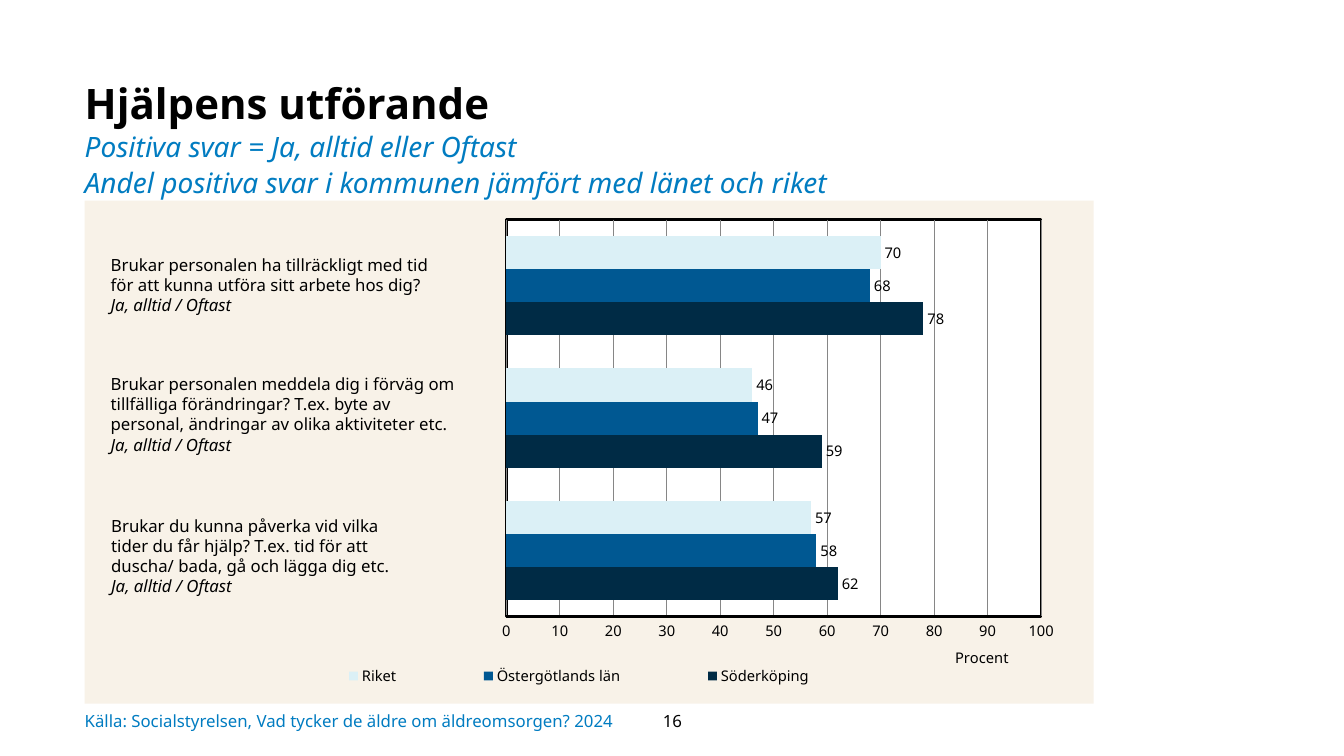
import pptx
import pptx.util
import pptx.chart.data
import pptx.dml.color
import pptx.enum.chart
import pptx.enum.text
import pptx.oxml

Pt = pptx.util.Pt
FONT = "Noto Sans"
BLACK, BLUE = "000000", "017CC1"
ANCHOR = pptx.enum.text.MSO_ANCHOR
ALIGN = pptx.enum.text.PP_ALIGN
ANSWER = "Ja, alltid / Oftast"
LEFT = 60.5
SERIES = [
    ("Söderköping", (62, 59, 78), "002B45"),
    ("Östergötlands län", (58, 47, 68), "005892"),
    ("Riket", (57, 46, 70), "DBF0F6"),
]
QUESTIONS = [
    ((72, 178.5, 340, 63.5), ["Brukar personalen ha tillräckligt med tid",
                              "för att kunna utföra sitt arbete hos dig?"]),
    ((72, 263.5, 268, 65.5), ["Brukar personalen meddela dig i förväg om tillfälliga förändringar? "
                              "T.ex. byte av personal, ändringar av olika aktiviteter etc."]),
    ((72.3, 364.5, 214, 65.5), ["Brukar du kunna påverka vid vilka tider du får hjälp? "
                                "T.ex. tid för att duscha/ bada, gå och lägga dig etc."]),
]


def rgb(value):
    return pptx.dml.color.RGBColor.from_string(value)


def set_font(font, size, color=BLACK, **formats):
    font.color.rgb = rgb(color)
    for name, value in {"name": FONT, "size": Pt(size), **formats}.items():
        setattr(font, name, value)


def set_fill(fmt, color):
    fmt.fill.solid()
    fmt.fill.fore_color.rgb = rgb(color)


def add_text(slide, box, lines, inset=(7.2, 3.6), anchor=ANCHOR.TOP, align=ALIGN.LEFT):
    tf = slide.shapes.add_textbox(*map(Pt, box)).text_frame
    dx, dy = map(Pt, inset)
    frame = {"word_wrap": True, "vertical_anchor": anchor, "margin_left": dx,
             "margin_right": dx, "margin_top": dy, "margin_bottom": dy}
    for name, value in frame.items():
        setattr(tf, name, value)
    for i, (text, size, formats, spacing) in enumerate(lines):
        p = tf.add_paragraph() if i else tf.paragraphs[0]
        p.alignment = align
        if spacing:
            p.line_spacing = Pt(spacing)
        r = p.add_run()
        r.text = text
        set_font(r.font, size, **formats)


def add_heading(slide, box):
    subtitle = {"color": BLUE, "italic": True}
    add_text(slide, box, [
        ("Hjälpens utförande", 30, {"bold": True}, 42),
        ("Positiva svar = Ja, alltid eller Oftast", 20, subtitle, 25.7),
        ("Andel positiva svar i kommunen jämfört med länet och riket", 20, subtitle, 25.7),
    ], inset=(0, 0))


def add_question(slide, box, lines):
    add_text(slide, box, [(line, 12, {}, None) for line in lines]
             + [(ANSWER, 12, {"italic": True}, None)])


def layout_xml(target="", **sizes):
    inner = f'<c:layoutTarget val="{target}"/>' if target else ""
    inner += '<c:xMode val="edge"/><c:yMode val="edge"/>'
    inner += "".join(f'<c:{name} val="{value}"/>' for name, value in sizes.items())
    ns = "http://schemas.openxmlformats.org/drawingml/2006/chart"
    return pptx.oxml.parse_xml(
        f'<c:layout xmlns:c="{ns}"><c:manualLayout>{inner}</c:manualLayout></c:layout>')


def set_layout(element, after, layout):
    for old in element.findall(pptx.oxml.ns.qn("c:layout")):
        element.remove(old)
    if after:
        element.find(pptx.oxml.ns.qn(after)).addnext(layout)
    else:
        element.insert(0, layout)


def shape_properties(fill, line=""):
    ns = "http://schemas.openxmlformats.org/drawingml/2006/"
    border = (f'<a:ln w="{Pt(2)}"><a:solidFill><a:srgbClr val="{line}"/></a:solidFill></a:ln>'
              if line else "<a:ln><a:noFill/></a:ln>")
    return pptx.oxml.parse_xml(
        f'<c:spPr xmlns:c="{ns}chart" xmlns:a="{ns}main"><a:solidFill>'
        f'<a:srgbClr val="{fill}"/></a:solidFill>{border}</c:spPr>')


def add_bar_chart(slide, box):
    data = pptx.chart.data.CategoryChartData()
    data.categories = ["1", "2", "3"]
    for name, values, _ in SERIES:
        data.add_series(name, values)
    kind = pptx.enum.chart.XL_CHART_TYPE.BAR_CLUSTERED
    chart = slide.shapes.add_chart(kind, *map(Pt, box), data).chart
    set_font(chart.font, 10.5)
    chart.has_title = False

    plot = chart.plots[0]
    plot.gap_width, plot.overlap, plot.vary_by_categories = 100, 0, False
    for series, (_, _, color) in zip(plot.series, SERIES):
        set_fill(series.format, color)
        labels = series.data_labels
        labels.show_value = True
        labels.position = pptx.enum.chart.XL_LABEL_POSITION.OUTSIDE_END
        set_font(labels.font, 10.5)

    chart.category_axis.visible = False
    axis = chart.value_axis
    tick = pptx.enum.chart.XL_TICK_MARK.NONE
    settings = {"minimum_scale": 0, "maximum_scale": 100, "major_unit": 10,
                "major_tick_mark": tick, "minor_tick_mark": tick, "has_major_gridlines": True}
    for name, value in settings.items():
        setattr(axis, name, value)
    for line, color, width in ((axis.format.line, BLACK, 2),
                               (axis.major_gridlines.format.line, "868686", 0.75)):
        line.color.rgb, line.width = rgb(color), Pt(width)
    set_font(axis.tick_labels.font, 10.5)
    title = axis.axis_title
    title.text_frame.text = "Procent"
    set_font(title.text_frame.paragraphs[0].runs[0].font, 10.5, bold=False)

    chart.has_legend = True
    legend = chart.legend
    legend.position = pptx.enum.chart.XL_LEGEND_POSITION.BOTTOM
    legend.include_in_layout = False
    set_font(legend.font, 10.5)

    area = plot._element.getparent()
    set_layout(area, None, layout_xml("inner", x=0.418, y=0.038, w=0.53, h=0.789))
    set_layout(title._element, "c:tx", layout_xml(x=0.86, y=0.88))
    set_layout(legend._element, "c:legendPos", layout_xml(x=0.18, y=0.92, w=0.62, h=0.05))
    area.append(shape_properties("FFFFFF", BLACK))
    area.getparent().addnext(shape_properties("F8F2E8"))


def add_footer(slide, box):
    x, y, w, h = box
    add_text(slide, box, [("Källa: Socialstyrelsen, Vad tycker de äldre om äldreomsorgen? 2024",
                           12, {"color": BLUE}, None)], inset=(0, 0), anchor=ANCHOR.MIDDLE)
    add_text(slide, (x + 383, y, 73.5, h), [("16", 12, {}, None)],
             anchor=ANCHOR.MIDDLE, align=ALIGN.CENTER)


def main():
    prs = pptx.Presentation()
    prs.slide_width, prs.slide_height = Pt(960), Pt(540)
    slide = prs.slides.add_slide(prs.slide_layouts[6])
    add_heading(slide, (LEFT, 49, 561, 87))
    add_bar_chart(slide, (LEFT, 143.3, 720.7, 359.3))
    for box, lines in QUESTIONS:
        add_question(slide, box, lines)
    add_footer(slide, (LEFT, 500.4, 650, 28.8))
    prs.save("out.pptx")


if __name__ == "__main__":
    main()
